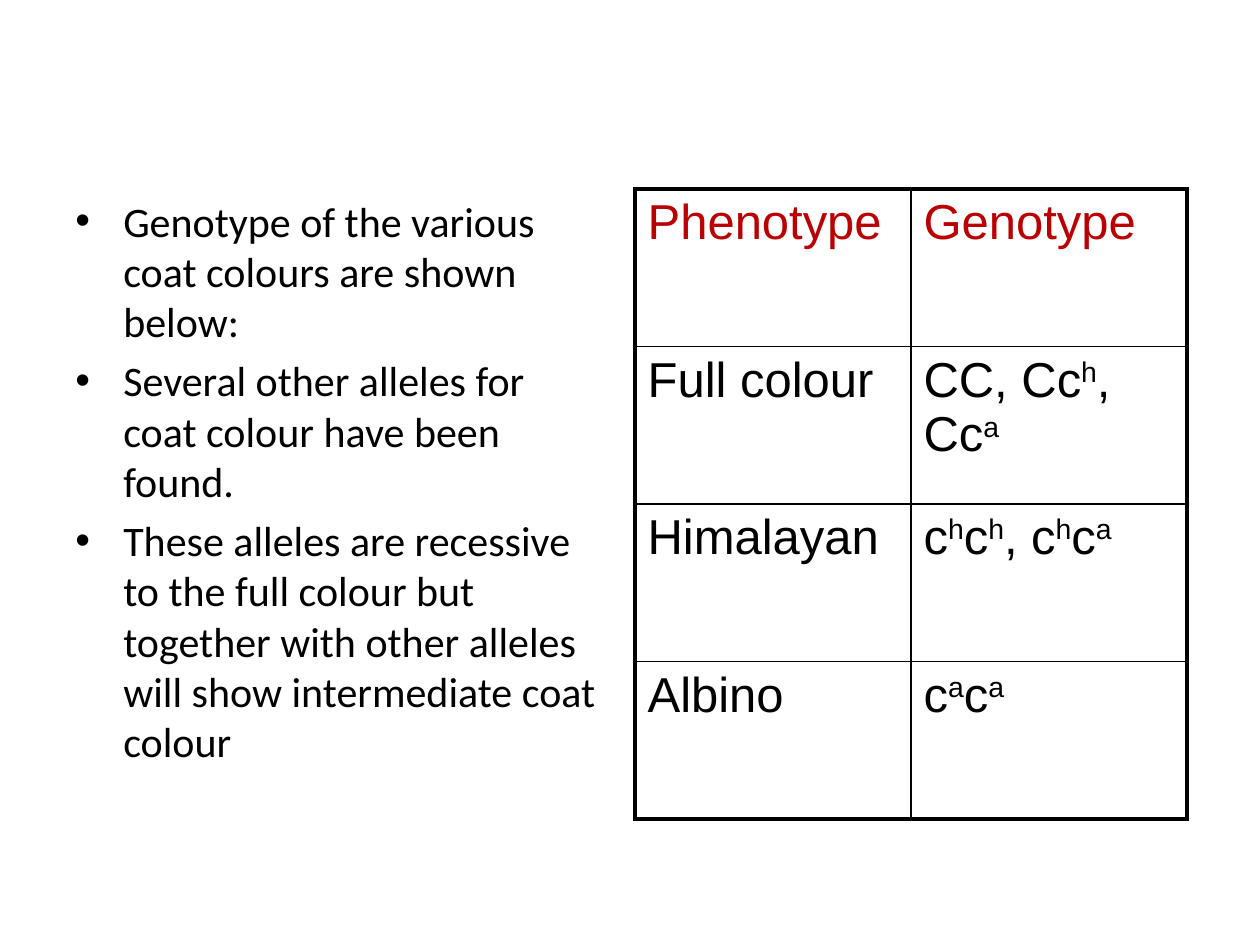
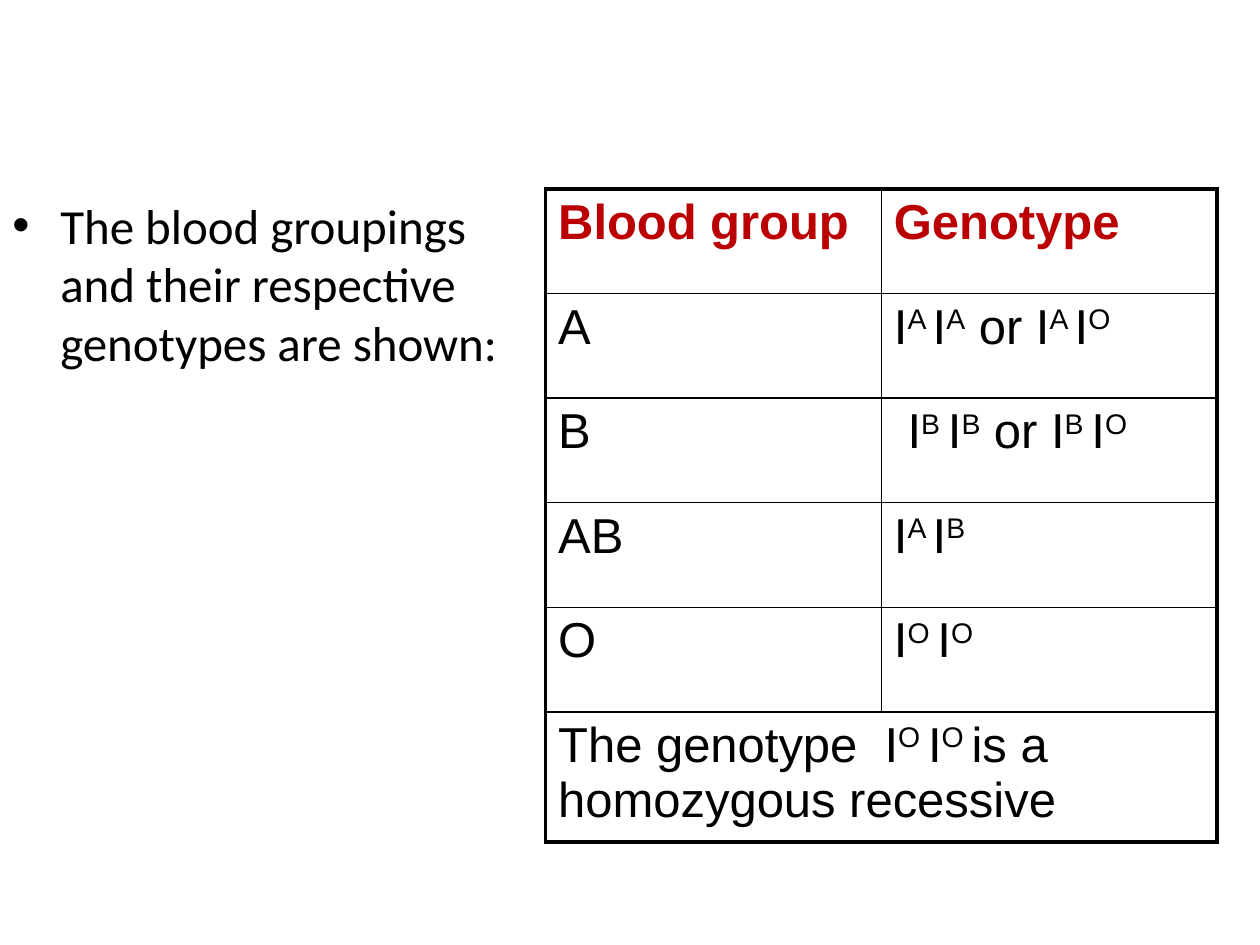
from lxml.etree import SubElement
from pptx import Presentation
from pptx.dml.color import RGBColor
from pptx.oxml.ns import qn
from pptx.util import Inches, Pt

BLACK = "000000"
HEADER_RED = "BA0003"
BODY_FONT = "Calibri"
TABLE_FONT = "Arial"
TABLE_SIZE = 28
OUTER_LINE, INNER_LINE = 2.25, 1
CONTENT_TOP = 1.5
BULLET_INDENT = 0.38

# Text between bars is superscript.
COAT_BULLETS = [
    "Genotype of the various coat colours are shown below:",
    "Several other alleles for coat colour have been found.",
    "These alleles are recessive to the full colour but together with "
    "other alleles will show intermediate coat colour",
]
COAT_ROWS = [
    ["Phenotype", "Genotype"],
    ["Full colour", "CC, Cc|h|, Cc|a|"],
    ["Himalayan", "c|h|c|h|, c|h|c|a|"],
    ["Albino", "c|a|c|a|"],
]
BLOOD_BULLETS = ["The blood groupings and their respective genotypes are shown:"]
BLOOD_ROWS = [
    ["Blood group", "Genotype"],
    ["A", "I|A |I|A| or I|A |I|O|"],
    ["B", " I|B |I|B| or I|B |I|O|"],
    ["AB", "I|A |I|B|"],
    ["O", "I|O |I|O|"],
    ["The genotype  I|O |I|O |is a homozygous recessive"],
]


def rgb(hex_colour):
    return RGBColor.from_string(hex_colour)


def write_paragraph(paragraph, text, font_name, size, colour=BLACK, bold=False):
    paragraph.space_before = Pt(size * 0.2)
    for index, piece in enumerate(text.split("|")):
        if not piece:
            continue
        run = paragraph.add_run()
        run.text = piece
        font = run.font
        font.name, font.size, font.bold = font_name, Pt(size), bold
        font.color.rgb = rgb(colour)
        if index % 2:
            font._element.set("baseline", "30000")


def add_bullets(slide, bullets, left, width, size):
    box = slide.shapes.add_textbox(
        Inches(left), Inches(CONTENT_TOP), Inches(width), Inches(5))
    frame = box.text_frame
    frame.word_wrap = True
    for index, text in enumerate(bullets):
        paragraph = frame.add_paragraph() if index else frame.paragraphs[0]
        write_paragraph(paragraph, text, BODY_FONT, size)
        properties = paragraph._p.get_or_add_pPr()
        properties.set("marL", str(Inches(BULLET_INDENT)))
        properties.set("indent", str(-Inches(BULLET_INDENT)))
        SubElement(properties, qn("a:buFont"), typeface="Arial")
        SubElement(properties, qn("a:buChar"), char="•")


def set_borders(cell, outer_sides):
    """Draw all four sides, with a heavy line on those named."""
    properties = cell._tc.get_or_add_tcPr()
    for side in "LRTB":
        weight = OUTER_LINE if side in outer_sides else INNER_LINE
        line = SubElement(properties, qn(f"a:ln{side}"), w=str(Pt(weight)))
        fill = SubElement(line, qn("a:solidFill"))
        SubElement(fill, qn("a:srgbClr"), val=BLACK)


def add_genotype_table(slide, rows, left, width, row_height, bold_header=False):
    """A row with a single text spans both columns."""
    row_count, column_count = len(rows), len(rows[0])
    table = slide.shapes.add_table(
        row_count, column_count, Inches(left), Inches(CONTENT_TOP),
        Inches(width), Inches(row_height * row_count)).table
    table.first_row = table.horz_banding = False
    for r, texts in enumerate(rows):
        for c in range(column_count):
            cell = table.cell(r, c)
            spanning = len(texts) < column_count
            sides = ("T" if r == 0 else "") + ("B" if r == row_count - 1 else "")
            sides += "L" if c == 0 else ""
            sides += "R" if spanning or c == column_count - 1 else ""
            set_borders(cell, sides)
            cell.fill.background()
            if c < len(texts):
                write_paragraph(
                    cell.text_frame.paragraphs[0], texts[c], TABLE_FONT, TABLE_SIZE,
                    BLACK if r else HEADER_RED, bold_header and r == 0)
        if spanning:
            table.cell(r, 0).merge(table.cell(r, column_count - 1))


def add_blank_slide(presentation):
    return presentation.slides.add_slide(presentation.slide_layouts[6])


def build_coat_colour_slide(presentation):
    slide = add_blank_slide(presentation)
    add_bullets(slide, COAT_BULLETS, left=0.5, width=4.38, size=24)
    add_genotype_table(slide, COAT_ROWS, left=5.04, width=4.38, row_height=1.25)


def build_blood_group_slide(presentation):
    slide = add_blank_slide(presentation)
    add_bullets(slide, BLOOD_BULLETS, left=0, width=4.25, size=28)
    add_genotype_table(slide, BLOOD_ROWS, left=4.33, width=5.33,
                       row_height=0.83, bold_header=True)


def main():
    presentation = Presentation()
    presentation.slide_width, presentation.slide_height = Inches(10), Inches(7.5)
    build_coat_colour_slide(presentation)
    build_blood_group_slide(presentation)
    presentation.save("out.pptx")


if __name__ == "__main__":
    main()
